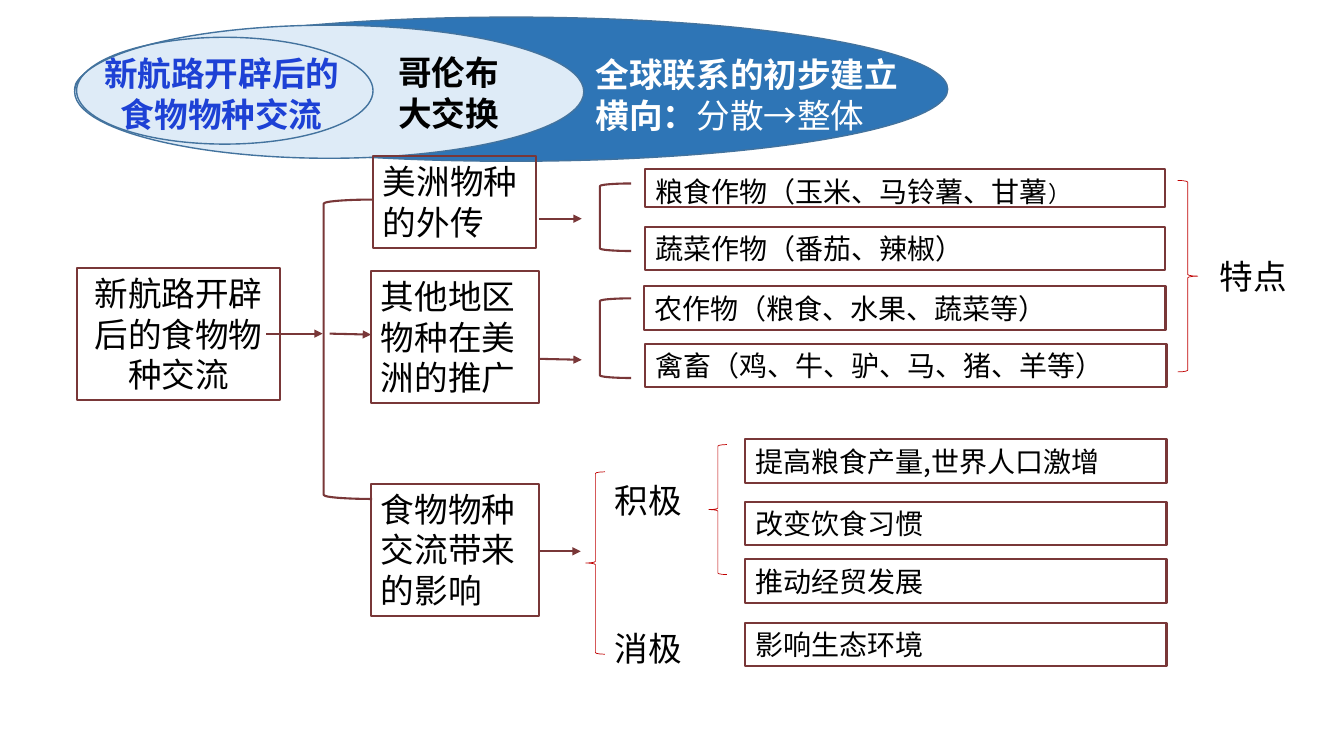
"""Build the mind map slide on the food species exchange."""
from dataclasses import dataclass
from typing import Optional

from lxml.etree import SubElement as Sub
from pptx import Presentation
from pptx.dml.color import RGBColor
from pptx.enum.shapes import MSO_CONNECTOR as Conn, MSO_SHAPE as Kind
from pptx.enum.text import MSO_ANCHOR as Anchor, PP_ALIGN as Align
from pptx.oxml.ns import qn
from pptx.util import Inches, Pt

BROWN, RED, EDGE = "793738", "C00000", "43739E"
BLACK, WHITE, BLUE = "000000", "FFFFFF", "1D41D5"
NOTO, LATIN = "Noto Sans CJK SC", "Calibri"


@dataclass
class Run:
    text: str
    size: float = 24
    bold: bool = False
    color: str = BLACK
    font: str = NOTO


@dataclass
class Form:
    kind: Kind
    at: tuple[float, float, float, float]
    line: str
    width: float
    fill: Optional[str] = None
    turn: float = 0


@dataclass
class Box:
    at: tuple[float, float, float, float]
    runs: list[Run]
    mid: bool = False


@dataclass
class Label:
    at: tuple[float, float, float, float]
    lines: list[list[Run]]
    mid: bool = False
    wrap: bool = False


@dataclass
class Arrow:
    start: tuple[float, float]
    end: tuple[float, float]


def paint(text: str) -> RGBColor:
    return RGBColor.from_string(text)


def write(frame, lines: list[list[Run]], mid: bool, wrap: bool) -> None:
    frame.word_wrap = wrap
    frame.vertical_anchor = Anchor.TOP
    for num, runs in enumerate(lines):
        para = frame.add_paragraph() if num else frame.paragraphs[0]
        para.alignment = Align.CENTER if mid else Align.LEFT
        para.line_spacing = Pt(1.2 * runs[0].size)
        for item in runs:
            run = para.add_run()
            run.text = item.text
            font = run.font
            font.name, font.size, font.bold = item.font, Pt(item.size), item.bold
            font.color.rgb = paint(item.color)
            Sub(run._r.get_or_add_rPr(), qn("a:ea"), typeface=NOTO)


def draw(slide, form: Form):
    shape = slide.shapes.add_shape(form.kind, *map(Inches, form.at))
    shape.shadow.inherit = False
    shape.rotation = form.turn
    shape.line.color.rgb = paint(form.line)
    shape.line.width = Pt(form.width)
    if form.fill:
        shape.fill.solid()
        shape.fill.fore_color.rgb = paint(form.fill)
    else:
        shape.fill.background()
    return shape


def add_box(slide, box: Box) -> None:
    shape = draw(slide, Form(Kind.RECTANGLE, box.at, BROWN, 1.48))
    write(shape.text_frame, [box.runs], box.mid, True)


def add_label(slide, label: Label) -> None:
    shape = slide.shapes.add_textbox(*map(Inches, label.at))
    write(shape.text_frame, label.lines, label.mid, label.wrap)


def add_arrow(slide, arrow: Arrow) -> None:
    ends = map(Inches, arrow.start + arrow.end)
    line = slide.shapes.add_connector(Conn.STRAIGHT, *ends)
    line.line.color.rgb = paint(BROWN)
    line.line.width = Pt(1.48)
    Sub(line.line._get_or_add_ln(), qn("a:tailEnd"), type="triangle")
    Sub(line._element.spPr, qn("a:effectLst"))


def bracket(*at: float) -> Form:
    return Form(Kind.RIGHT_BRACKET, at, BROWN, 1.5, turn=180)


def brace(*at: float, turn: float = 180) -> Form:
    return Form(Kind.RIGHT_BRACE, at, RED, 0.5, turn=turn)


def leaf(left: float, top: float, wide: float, text: str) -> Box:
    return Box((left, top, wide, 0.43), [Run(text, 20)])


def tag(left: float, top: float, text: str) -> Label:
    return Label((left, top, 0.87, 0.5), [[Run(text, font=LATIN)]])


OVALS = [
    Form(Kind.OVAL, (0.74, 0.17, 8.66, 1.43), EDGE, 1, "2E75B6"),
    Form(Kind.OVAL, (0.74, 0.25, 5.05, 1.32), EDGE, 1, "DEEBF7"),
    Form(Kind.OVAL, (0.76, 0.37, 2.94, 1.06), EDGE, 1),
]
BOXES = [
    Box((0.76, 2.66, 2.02, 1.31), [Run("新航路开辟后的食物物种交流")], True),
    Box((3.7, 1.55, 1.62, 0.91), [Run("美洲物种的外传")]),
    Box((3.68, 2.69, 1.67, 1.31), [Run("其他地区物种在美洲的推广")]),
    Box((3.68, 4.8, 1.67, 1.31), [Run("食物物种交流带来的影响")]),
    Box((6.4, 1.68, 5.16, 0.37),
        [Run("粮食作物（玉米、马铃薯、甘薯", 20), Run("）", 16)]),
    leaf(6.4, 2.25, 5.16, "蔬菜作物（番茄、辣椒）"),
    leaf(6.39, 2.84, 5.17, "农作物（粮食、水果、蔬菜等）"),
    leaf(6.4, 3.41, 5.17, "禽畜（鸡、牛、驴、马、猪、羊等）"),
    leaf(7.39, 4.36, 4.18, "提高粮食产量,世界人口激增"),
    leaf(7.39, 4.98, 4.18, "改变饮食习惯"),
    leaf(7.39, 5.55, 4.18, "推动经贸发展"),
    leaf(7.39, 6.18, 4.18, "影响生态环境"),
]
CLASPS = [
    bracket(3.21, 1.98, 0.48, 2.97),
    bracket(5.95, 1.82, 0.31, 0.67),
    bracket(5.95, 2.96, 0.31, 0.79),
    brace(11.68, 1.79, 0.2, 1.9, turn=0),
    brace(5.81, 4.68, 0.19, 1.81),
    brace(7.03, 4.41, 0.18, 1.29),
]
ARROWS = [
    Arrow((2.64, 3.31), (3.2, 3.31)),
    Arrow((3.27, 3.31), (3.68, 3.32)),
    Arrow((5.35, 2.17), (5.77, 2.17)),
    Arrow((5.35, 3.56), (5.77, 3.57)),
    Arrow((5.35, 5.47), (5.76, 5.47)),
]
LABELS = [
    tag(12, 2.49, "特点"),
    tag(6, 4.71, "积极"),
    tag(6, 6.18, "消极"),
    Label((0.93, 0.48, 2.54, 0.91),
          [[Run(text, 24, True, BLUE)] for text in ("新航路开辟后的", "食物物种交流")],
          mid=True),
    Label((3.85, 0.47, 1.2, 0.91),
          [[Run(text, 24, True, font=LATIN)] for text in ("哥伦布", "大交换")]),
    Label((5.81, 0.49, 3.47, 0.91),
          [[Run("全球联系的初步建立", 24, True, WHITE, LATIN)],
           [Run("横向：", 24, True, WHITE, LATIN),
            Run("分散→整体", 24, False, WHITE, LATIN)]],
          wrap=True),
]


def main() -> None:
    deck = Presentation()
    deck.slide_width, deck.slide_height = Inches(13.33), Inches(7.5)
    slide = deck.slides.add_slide(deck.slide_layouts[6])
    for oval in OVALS:
        draw(slide, oval)
    for box in BOXES:
        add_box(slide, box)
    for clasp in CLASPS:
        draw(slide, clasp)
    for arrow in ARROWS:
        add_arrow(slide, arrow)
    for label in LABELS:
        add_label(slide, label)
    deck.save("out.pptx")


if __name__ == "__main__":
    main()
